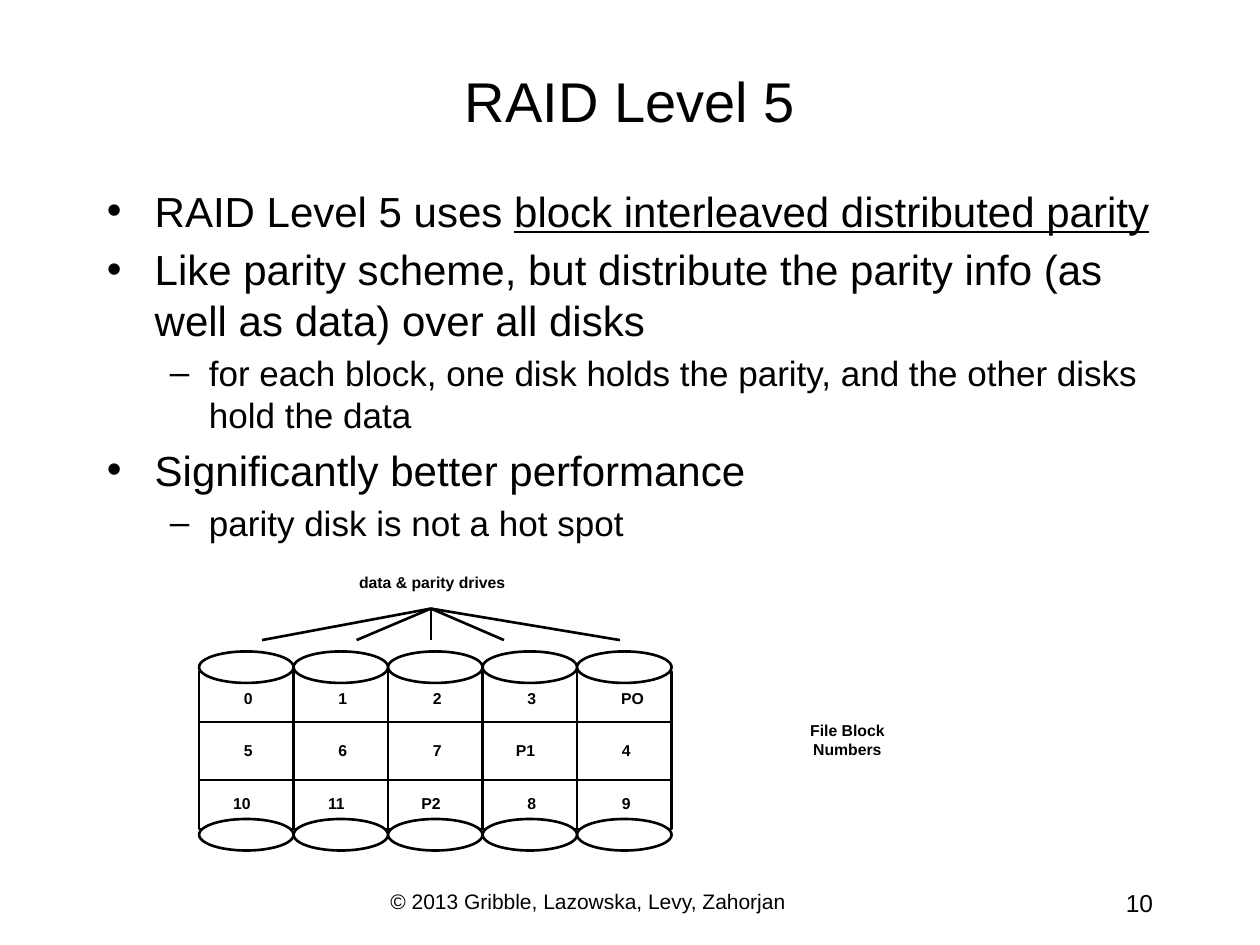
from pptx import Presentation
from pptx.dml.color import RGBColor
from pptx.enum.shapes import MSO_CONNECTOR, MSO_SHAPE
from pptx.enum.text import MSO_ANCHOR, MSO_AUTO_SIZE, PP_ALIGN
from pptx.oxml.ns import qn
from pptx.util import Inches, Pt
from lxml import etree

BLACK = RGBColor(0x00, 0x00, 0x00)
WHITE = RGBColor(0xFF, 0xFF, 0xFF)


def add_text(shapes, box, text, size, align=PP_ALIGN.LEFT, label=False):
    tb = shapes.add_textbox(*[Inches(v) for v in box])
    tf = tb.text_frame
    tf.word_wrap = not label
    if label:
        tf.auto_size = MSO_AUTO_SIZE.SHAPE_TO_FIT_TEXT
    tf.text = text
    for p in tf.paragraphs:
        p.alignment = align
        for r in p.runs:
            r.font.name = "Arial"
            r.font.size = Pt(size)
            r.font.bold = label
            r.font.color.rgb = BLACK
    return tf


def add_line(shapes, x1, y1, x2, y2):
    line = shapes.add_connector(MSO_CONNECTOR.STRAIGHT, Inches(x1), Inches(y1), Inches(x2), Inches(y2))
    line.line.color.rgb = BLACK
    line.line.width = Pt(1.5)
    etree.SubElement(line._element.spPr, qn("a:effectLst"))


prs = Presentation()
prs.slide_width, prs.slide_height = Inches(10), Inches(7.5)
s = prs.slides.add_slide(prs.slide_layouts[5])

# Title
title = s.shapes.title
title.left, title.top, title.width, title.height = [Inches(v) for v in (0.75, 0.42, 8.5, 0.75)]
title.text_frame.text = "RAID Level 5"
title.text_frame.vertical_anchor = MSO_ANCHOR.MIDDLE
p = title.text_frame.paragraphs[0]
p.alignment = PP_ALIGN.CENTER
p.runs[0].font.name = "Arial"
p.runs[0].font.size = Pt(32)
p.runs[0].font.color.rgb = BLACK

# Bulleted text: level and wording
points = [
    (0, "RAID Level 5 uses "),
    (0, "Like parity scheme, but distribute the parity info (as well as data) over all disks"),
    (1, "for each block, one disk holds the parity, and the other disks hold the data"),
    (0, "Significantly better performance"),
    (1, "parity disk is not a hot spot"),
]
# Per level: bullet, font size, left margin, hanging indent
levels = [("•", 24, 0.38, 0.38), ("–", 20, 0.81, 0.31)]
tf = add_text(s.shapes, (0.75, 1.42, 8.5, 5.42), "\n".join(t for _, t in points), 24)
r = tf.paragraphs[0].add_run()
r.text = "block interleaved distributed parity"
r.font.name = "Arial"
r.font.underline = True
r.font.color.rgb = BLACK
for p, (level, _) in zip(tf.paragraphs, points):
    bullet, size, margin, hang = levels[level]
    p.level = level
    p.space_before = Pt(size * 0.2)
    for r in p.runs:
        r.font.size = Pt(size)
    pPr = p._p.get_or_add_pPr()
    pPr.set("marL", str(Inches(margin)))
    pPr.set("indent", str(-Inches(hang)))
    etree.SubElement(pPr, qn("a:buFont"), typeface="Arial")
    etree.SubElement(pPr, qn("a:buChar"), char=bullet)

# Disk array: frame and dividers
LEFT, TOP, DISK_W, HEIGHT = 1.58, 5.33, 0.75, 1.25
blocks = [
    ["0", "1", "2", "3", "PO"],
    ["5", "6", "7", "P1", "4"],
    ["10", "11", "P2", "8", "9"],
]
disks = len(blocks[0])
right, bottom = LEFT + disks * DISK_W, TOP + HEIGHT
array = s.shapes.add_group_shape().shapes
frame = array.add_shape(MSO_SHAPE.RECTANGLE, Inches(LEFT), Inches(TOP), Inches(disks * DISK_W), Inches(HEIGHT))
frame.shadow.inherit = False
frame.fill.background()
frame.line.color.rgb = BLACK
frame.line.width = Pt(1.5)
for y in (5.73, 6.19):
    add_line(array, LEFT, y, right, y)
for i in range(1, disks):
    x = LEFT + i * DISK_W
    add_line(array, x, TOP, x, bottom)

# Disk ends
for y in (6.5, 5.17):
    for i in range(disks):
        end = array.add_shape(MSO_SHAPE.OVAL, Inches(LEFT + i * DISK_W), Inches(y), Inches(DISK_W), Inches(0.25))
        end.shadow.inherit = False
        end.fill.solid()
        end.fill.fore_color.rgb = WHITE
        end.line.color.rgb = BLACK
        end.line.width = Pt(1.5)

# Block numbers: two-character labels sit a little further left, PO further right
for y, row in zip((5.42, 5.83, 6.25), blocks):
    for i, block in enumerate(row):
        width, center = (0.42, 0.34) if len(block) == 2 else (0.27, 0.39)
        if block == "PO":
            center = 0.44
        x = LEFT + i * DISK_W + center - width / 2
        add_text(array, (x, y, width, 0.25), block, 9, PP_ALIGN.CENTER, label=True)

# Fan from the drives label to the disks
for x in (2.08, 2.83, 3.42, 4, 4.92):
    add_line(array, 3.42, 4.83, x, 5.08)

# Diagram labels
add_text(array, (2.75, 4.5, 1.36, 0.25), "data & parity drives", 9, PP_ALIGN.CENTER, label=True)
add_text(array, (6.33, 5.67, 0.79, 0.4), "File Block\nNumbers", 9, PP_ALIGN.CENTER, label=True)

# Footer and slide number
add_text(s.shapes, (3, 7, 4, 0.33), "© 2013 Gribble, Lazowska, Levy, Zahorjan", 12)
add_text(s.shapes, (7.17, 7, 2.08, 0.33), "10", 14, PP_ALIGN.RIGHT)

prs.save("out.pptx")
